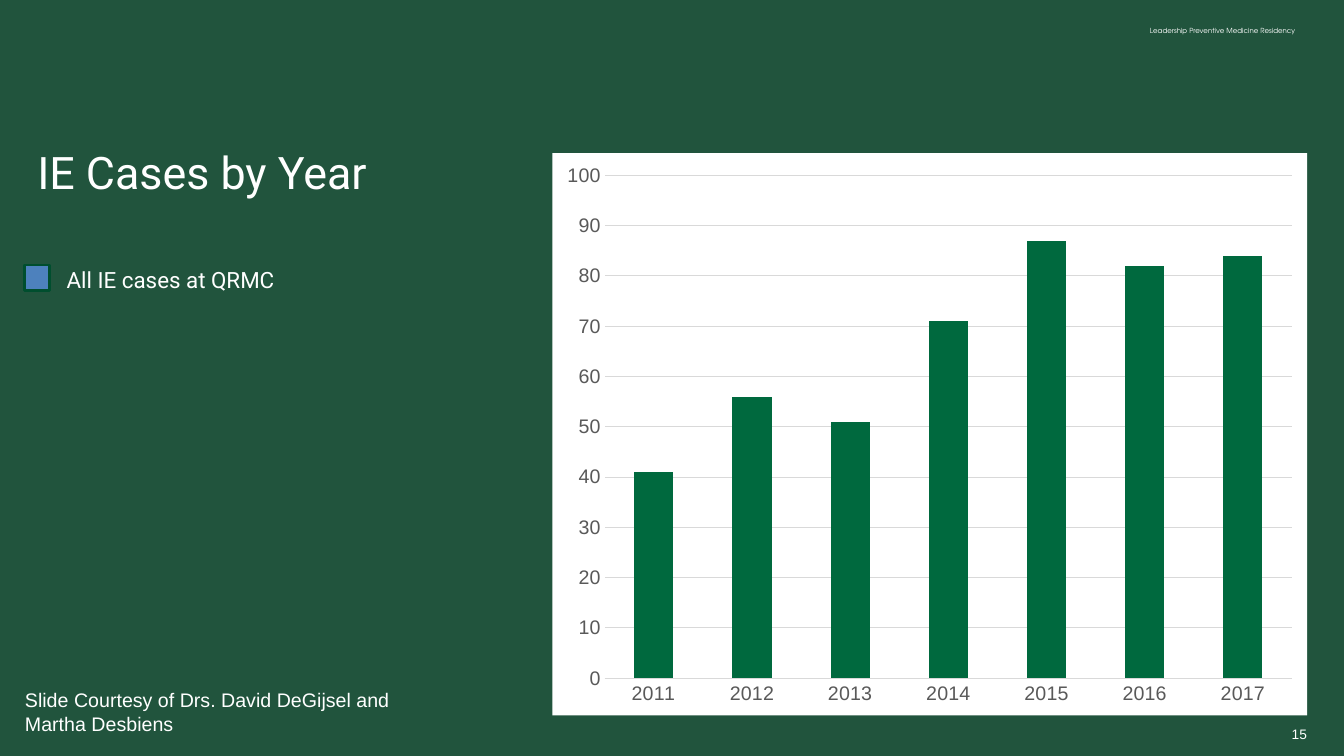
import pptx
import pptx.util
import pptx.chart.data
import pptx.dml.color
import pptx.enum.chart
import pptx.enum.shapes
import pptx.enum.text
import pptx.oxml
import pptx.oxml.ns

Cm = pptx.util.Cm
Pt = pptx.util.Pt
RGB = pptx.dml.color.RGBColor
ALIGN = pptx.enum.text.PP_ALIGN
ANCHOR = pptx.enum.text.MSO_ANCHOR
FIT = pptx.enum.text.MSO_AUTO_SIZE
TICK = pptx.enum.chart.XL_TICK_MARK

TITLE = "IE Cases by Year"
LEGEND = "All IE cases at QRMC"
HEADER = "Leadership Preventive Medicine Residency"
CREDIT = "Slide Courtesy of Drs. David DeGijsel and Martha Desbiens"
PAGE = "15"
CASES = {"2011": 41, "2012": 56, "2013": 51, "2014": 71,
         "2015": 87, "2016": 82, "2017": 84}

WHITE = RGB(0xFF, 0xFF, 0xFF)
GREEN = RGB(0x21, 0x54, 0x3D)
BAR = RGB(0x00, 0x69, 0x3E)
BLUE = RGB(0x4D, 0x81, 0xBD)
EDGE = RGB(0x00, 0x4E, 0x2E)
GRID = RGB(0xD9, 0xD9, 0xD9)
LABEL = RGB(0x59, 0x59, 0x59)

# Left, top, width, height in centimetres
TOP, LOW = 3.86, 18.03
RIGHT = 32.94
PLOT = (13.92, TOP, RIGHT - 13.92, LOW - TOP)
HEAD = (0.94, TOP, 12.07, 2.57)
BODY = (0.89, 6.58, 12.09, LOW - 6.58)
KEY = (0.61, 6.68, 0.64, 0.64)
TAG = (28.73, 0.71, 6.32, 0.18)
FOOT = (0.38, 17.22, 11.3, 1.45)
NUM = (RIGHT - 1.45, 18.19, 1.45, 0.61)


def write(shape, text, box, size, font="Roboto", align=ALIGN.LEFT,
          anchor=ANCHOR.TOP, inset=True, lead=None, gap=None, indent=None):
    shape.left, shape.top, shape.width, shape.height = map(Cm, box)
    frame = shape.text_frame
    frame.word_wrap = True
    frame.auto_size = FIT.NONE
    frame.vertical_anchor = anchor
    if not inset:
        frame.margin_left = frame.margin_right = 0
        frame.margin_top = frame.margin_bottom = 0
    para = frame.paragraphs[0]
    para.alignment = align
    if lead:
        para.line_spacing = lead
    if gap:
        para.space_before = para.space_after = Pt(gap)
    if indent:
        props = para._p.get_or_add_pPr()
        props.set("marL", str(Cm(indent)))
        props.set("indent", "0")
        pptx.oxml.ns.qn("a:buNone")
        props.append(pptx.oxml.parse_xml(
            "<a:buNone %s/>" % pptx.oxml.ns.nsdecls("a")))
    run = para.add_run()
    run.text = text
    run.font.name = font
    run.font.size = Pt(size)
    run.font.bold = False
    run.font.color.rgb = WHITE


def label(slide, text, box, size, **style):
    write(slide.shapes.add_textbox(0, 0, 0, 0), text, box, size, **style)


def style_axis(axis):
    axis.major_tick_mark = axis.minor_tick_mark = TICK.NONE
    font = axis.tick_labels.font
    font.name, font.size, font.color.rgb = "Arial", Pt(14), LABEL


def plot(slide):
    data = pptx.chart.data.CategoryChartData()
    data.categories = list(CASES)
    data.add_series("Series 1", list(CASES.values()))
    kind = pptx.enum.chart.XL_CHART_TYPE.COLUMN_STACKED
    chart = slide.shapes.add_chart(kind, *map(Cm, PLOT), data).chart
    chart.has_legend = chart.has_title = False
    chart.font.name, chart.font.size = "Arial", Pt(10)
    text = chart._chartSpace.find(pptx.oxml.ns.qn("c:txPr"))
    text.addprevious(pptx.oxml.parse_xml(
        '<c:spPr %s><a:solidFill><a:srgbClr val="%s"/></a:solidFill>'
        '<a:ln><a:noFill/></a:ln></c:spPr>'
        % (pptx.oxml.ns.nsdecls("c", "a"), WHITE)))

    years, count = chart.category_axis, chart.value_axis
    style_axis(years)
    style_axis(count)
    count.minimum_scale, count.maximum_scale, count.major_unit = 0, 100, 10
    count.has_major_gridlines = True
    count.format.line.fill.background()
    for line in (years.format.line, count.major_gridlines.format.line):
        line.color.rgb, line.width = GRID, Pt(0.75)

    bars = chart.plots[0]
    bars.gap_width, bars.overlap = 150, 100
    bars.vary_by_categories = False
    fill = bars.series[0].format.fill
    fill.solid()
    fill.fore_color.rgb = BAR


def main():
    deck = pptx.Presentation()
    deck.slide_width, deck.slide_height = Cm(33.87), Cm(19.05)
    slide = deck.slides.add_slide(deck.slide_layouts[1])
    back = slide.background.fill
    back.solid()
    back.fore_color.rgb = GREEN

    write(slide.shapes.title, TITLE, HEAD, 32, inset=False, lead=0.85)
    write(slide.placeholders[1], LEGEND, BODY, 16, inset=False,
          lead=1.2, gap=6, indent=0.79)
    label(slide, HEADER, TAG, 5, font="TeX Gyre Adventor",
          anchor=ANCHOR.MIDDLE, lead=0.9)
    label(slide, PAGE, NUM, 9.8, font="Arial", align=ALIGN.RIGHT,
          anchor=ANCHOR.MIDDLE, inset=False)
    plot(slide)

    key = slide.shapes.add_shape(
        pptx.enum.shapes.MSO_SHAPE.RECTANGLE, *map(Cm, KEY))
    key.shadow.inherit = False
    key.fill.solid()
    key.fill.fore_color.rgb = BLUE
    key.line.color.rgb, key.line.width = EDGE, Pt(2)
    label(slide, CREDIT, FOOT, 14, font="Arial")

    deck.save("out.pptx")


if __name__ == "__main__":
    main()
